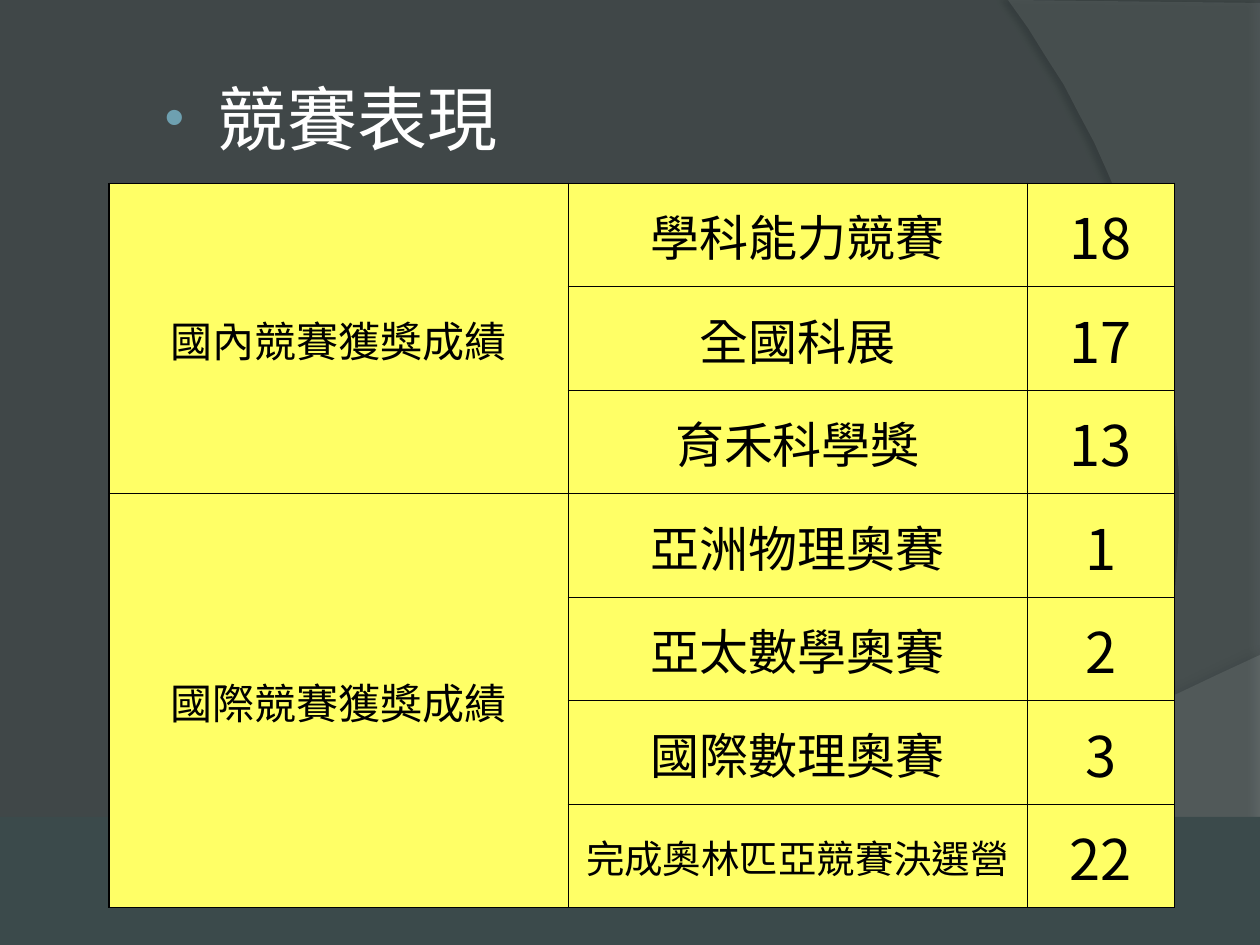
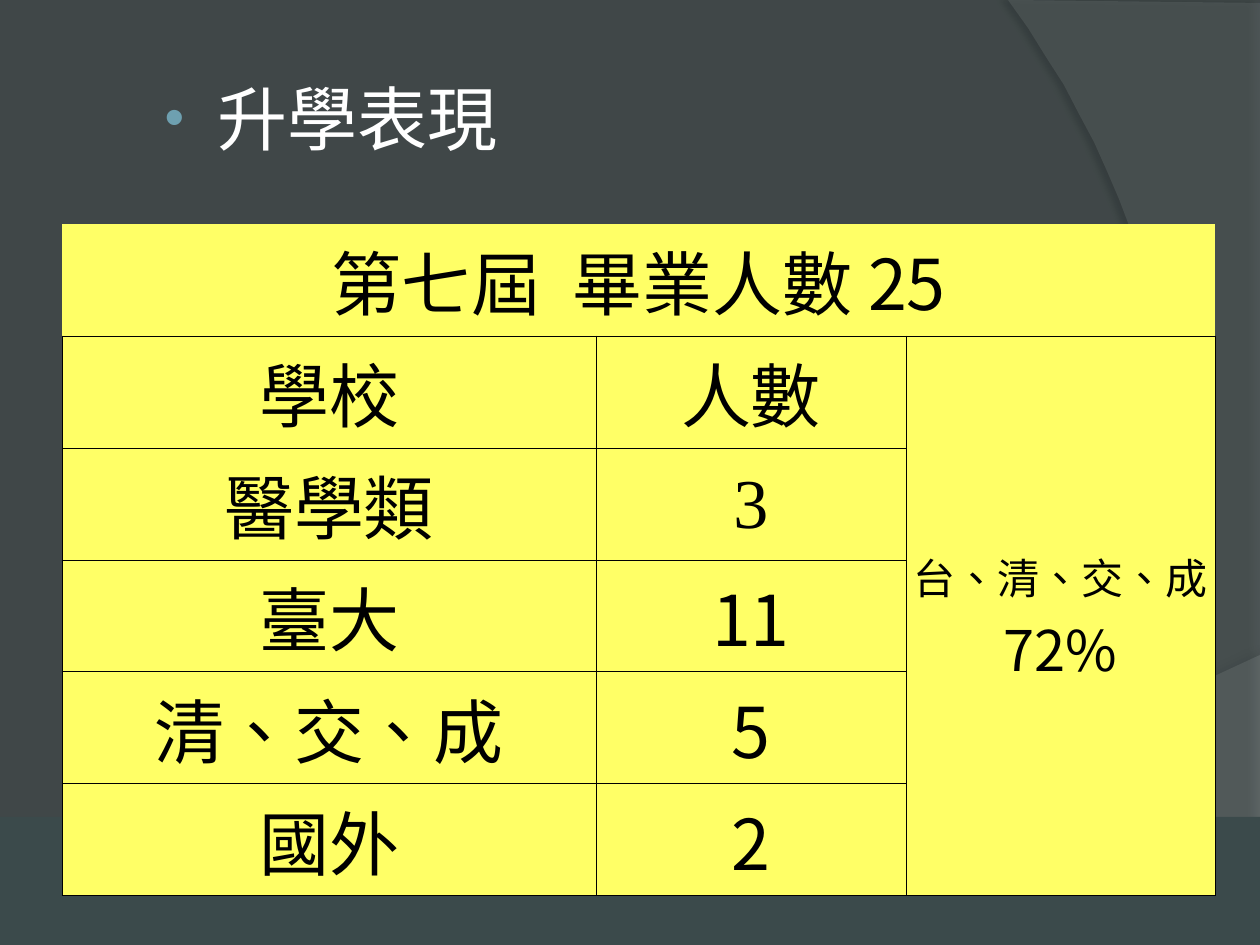
from lxml import etree
from pptx import Presentation
from pptx.dml.color import RGBColor
from pptx.enum.shapes import MSO_SHAPE
from pptx.enum.text import MSO_ANCHOR, MSO_AUTO_SIZE, PP_ALIGN
from pptx.oxml.ns import qn
from pptx.util import Pt

RECT = MSO_SHAPE.RECTANGLE
TOP, MIDDLE = MSO_ANCHOR.TOP, MSO_ANCHOR.MIDDLE
LEFT, CENTER = PP_ALIGN.LEFT, PP_ALIGN.CENTER
NO_FIT = MSO_AUTO_SIZE.NONE

PX = 914400 / 126
WIDTH, HEIGHT = 1260, 945
TITLE_ONLY = 5
PLAIN_TABLE = "{2D5ABB26-0587-4C30-8999-92F81FD0307C}"
SC, TC, TIMES = "Noto Sans CJK SC", "Noto Sans CJK TC", "Times New Roman"
COLORS = {
    "back": "3B3B3B", "wave": "7F7F7F", "arc": "5E5E5E", "tint": "73CBCF",
    "floor": "3B4A4B", "bullet": "6EA0B0", "title": "FFFFFF",
    "cell": "FFFF66", "ink": "000000",
}


def px(n):
    return round(n * PX)


def rgb(name):
    return RGBColor.from_string(COLORS[name])


def sub(parent, tag, **attrs):
    """Append a DrawingML element with the given attributes."""
    el = etree.SubElement(parent, qn(tag))
    for key, value in attrs.items():
        el.set(key, str(value))
    return el


def curve(p0, p1, p2, p3, steps=40):
    """Points along a cubic curve, both ends included."""
    points = []
    for i in range(steps + 1):
        t = i / steps
        weights = ((1 - t) ** 3, 3 * t * (1 - t) ** 2, 3 * t * t * (1 - t), t ** 3)
        points.append(tuple(sum(w * p[axis] for w, p in zip(weights, (p0, p1, p2, p3)))
                            for axis in (0, 1)))
    return points


class Deck:
    def __init__(self):
        self.prs = Presentation()
        self.prs.slide_width, self.prs.slide_height = px(WIDTH), px(HEIGHT)
        self.s = None

    def new_slide(self, title):
        self.s = self.prs.slides.add_slide(self.prs.slide_layouts[TITLE_ONLY])
        fill = self.s.background.fill
        fill.solid()
        fill.fore_color.rgb = rgb("back")
        self.backdrop()
        self.title(title)

    def backdrop(self):
        wave = curve((1260, 655), (704, 919), (493, 906), (0, 888))
        self.outline([(0, 946), (1260, 946)] + wave, "wave", 45, (35, 3.5, 270))
        arc = curve((1034, 945), (1178, 780), (1283, 378), (1008, 0))
        self.outline([(1260, 3), (1260, 945)] + arc, "arc", 40, (45, 4, 180))
        self.rect(0, 0, WIDTH, 817, "tint", 9)
        self.rect(0, 817, WIDTH, HEIGHT - 817, "floor")

    def paint(self, sp, color, alpha=100):
        sp.shadow.inherit = False
        sp.line.fill.background()
        sp.fill.solid()
        sp.fill.fore_color.rgb = rgb(color)
        if alpha < 100:
            clr = sp._element.spPr.find(qn("a:solidFill"))[0]
            sub(clr, "a:alpha", val=alpha * 1000)

    def rect(self, x, y, w, h, color, alpha=100):
        sp = self.s.shapes.add_shape(RECT, px(x), px(y), px(w), px(h))
        self.paint(sp, color, alpha)

    def outline(self, points, color, alpha, shadow):
        builder = self.s.shapes.build_freeform(*points[0], scale=PX)
        builder.add_line_segments(points[1:], close=True)
        sp = builder.convert_to_shape()
        self.paint(sp, color, alpha)
        opacity, dist, angle = shadow
        outer = sub(sp._element.spPr.find(qn("a:effectLst")), "a:outerShdw",
                    blurRad=Pt(4), dist=Pt(dist), dir=angle * 60000)
        clr = sub(outer, "a:srgbClr", val=COLORS["ink"])
        sub(clr, "a:alpha", val=opacity * 1000)

    def run(self, p, text, size, font, color="ink", spacing=0):
        r = p.add_run()
        r.text = text
        r.font.size, r.font.name = Pt(size), font
        r.font.color.rgb = rgb(color)
        rPr = r.font._element
        rPr.set("lang", "zh-TW")
        sub(rPr, "a:ea", typeface=font if "CJK" in font else TC)
        if spacing:
            rPr.set("spc", str(spacing * 100))

    def title(self, text):
        sp = self.s.shapes.title
        self.s.shapes._spTree.append(sp._element)  # in front of the backdrop
        sp.left, sp.top, sp.width, sp.height = px(147), px(69), px(462), px(276)
        tf = sp.text_frame
        tf.word_wrap, tf.auto_size, tf.vertical_anchor = True, NO_FIT, TOP
        p = tf.paragraphs[0]
        p.alignment = LEFT
        pPr = p._p.get_or_add_pPr()
        pPr.set("marL", str(px(58)))
        pPr.set("indent", str(px(-53)))
        sub(sub(pPr, "a:buClr"), "a:srgbClr", val=COLORS["bullet"])
        sub(pPr, "a:buSzPct", val=80000)
        sub(pPr, "a:buFont", typeface="Arial")
        sub(pPr, "a:buChar", char="•")
        self.run(p, text, 40, "Arial", "title")

    def table(self, x, y, widths, height, rows):
        frame = self.s.shapes.add_table(len(rows), len(widths), px(x), px(y),
                                        px(sum(widths)), px(height))
        tbl = frame.table
        tbl.first_row = tbl.horz_banding = False
        tbl._tbl.tblPr.find(qn("a:tableStyleId")).text = PLAIN_TABLE
        for col, w in zip(tbl.columns, widths):
            col.width = px(w)
        for row in tbl.rows:
            row.height = px(height / len(rows))
        for i, row in enumerate(rows):
            for j, paragraphs in enumerate(row):
                self.cell(tbl.cell(i, j), paragraphs)
        return tbl

    def cell(self, cell, paragraphs):
        """Fill a cell; each paragraph is a list of run arguments."""
        cell.margin_left = cell.margin_top = cell.margin_right = px(1)
        cell.margin_bottom = 0
        cell.vertical_anchor = MIDDLE
        self.borders(cell)
        cell.fill.solid()
        cell.fill.fore_color.rgb = rgb("cell")
        tf = cell.text_frame
        for k, runs in enumerate(paragraphs):
            p = tf.add_paragraph() if k else tf.paragraphs[0]
            p.alignment = CENTER
            for r in runs:
                self.run(p, *r)

    def borders(self, cell, **widths):
        """Rule the sides L, R, T and B, 0.5 pt unless given; 0 hides a side."""
        tcPr = cell._tc.get_or_add_tcPr()
        for k, side in enumerate("LRTB"):
            old = tcPr.find(qn("a:ln" + side))
            if old is not None:
                tcPr.remove(old)
            width = widths.get(side, 0.5)
            ln = sub(tcPr, "a:ln" + side, w=Pt(width))
            tcPr.insert(k, ln)
            if width:
                sub(sub(ln, "a:solidFill"), "a:srgbClr", val=COLORS["ink"])
            else:
                sub(ln, "a:noFill")


def one(text, size, font):
    """Cell content of a single run."""
    return [[(text, size, font)]]


def competition_slide(deck):
    deck.new_slide("競賽表現")
    groups = [
        ("國內競賽獲獎成績", [("學科能力競賽", 18), ("全國科展", 17), ("育禾科學獎", 13)]),
        ("國際競賽獲獎成績", [("亞洲物理奧賽", 1), ("亞太數學奧賽", 2),
                      ("國際數理奧賽", 3), ("完成奧林匹亞競賽決選營", 22)]),
    ]
    rows = []
    for group, results in groups:
        for k, (contest, count) in enumerate(results):
            rows.append([[] if k else one(group, 24, SC),
                         one(contest, 28 if len(contest) < 10 else 22, SC),
                         one(str(count), 32, TC)])
    tbl = deck.table(109, 183, [459, 459, 148], 725, rows)
    first = 0
    for _, results in groups:
        last = first + len(results) - 1
        for i in range(first, last + 1):
            deck.borders(tbl.cell(i, 0), L=1)
        tbl.cell(first, 0).merge(tbl.cell(last, 0))
        first = last + 1


def admission_slide(deck):
    deck.new_slide("升學表現")
    heading = [[("第七屆", 40, TC), (" ", 40, TC, "ink", 9), ("畢業人數 25", 40, TC)]]
    share = [[("台、清、交、成", 24, TC)], [("72%", 32, TC)]]
    schools = [("學校", "人數", TC), ("醫學類", "3", TIMES), ("臺大", "11", TC),
               ("清、交、成", "5", TC), ("國外", "2", TC)]
    rows = [[heading, [], []]]
    for k, (school, count, font) in enumerate(schools):
        rows.append([one(school, 40, font), one(count, 40, font), [] if k else share])
    tbl = deck.table(62, 224, [534, 310, 309], 672, rows)
    for j in range(3):
        deck.borders(tbl.cell(0, j), L=0, R=0, T=0)
    tbl.cell(0, 0).merge(tbl.cell(0, 2))
    tbl.cell(1, 2).merge(tbl.cell(len(schools), 2))


def main():
    deck = Deck()
    competition_slide(deck)
    admission_slide(deck)
    deck.prs.save("out.pptx")


if __name__ == "__main__":
    main()
